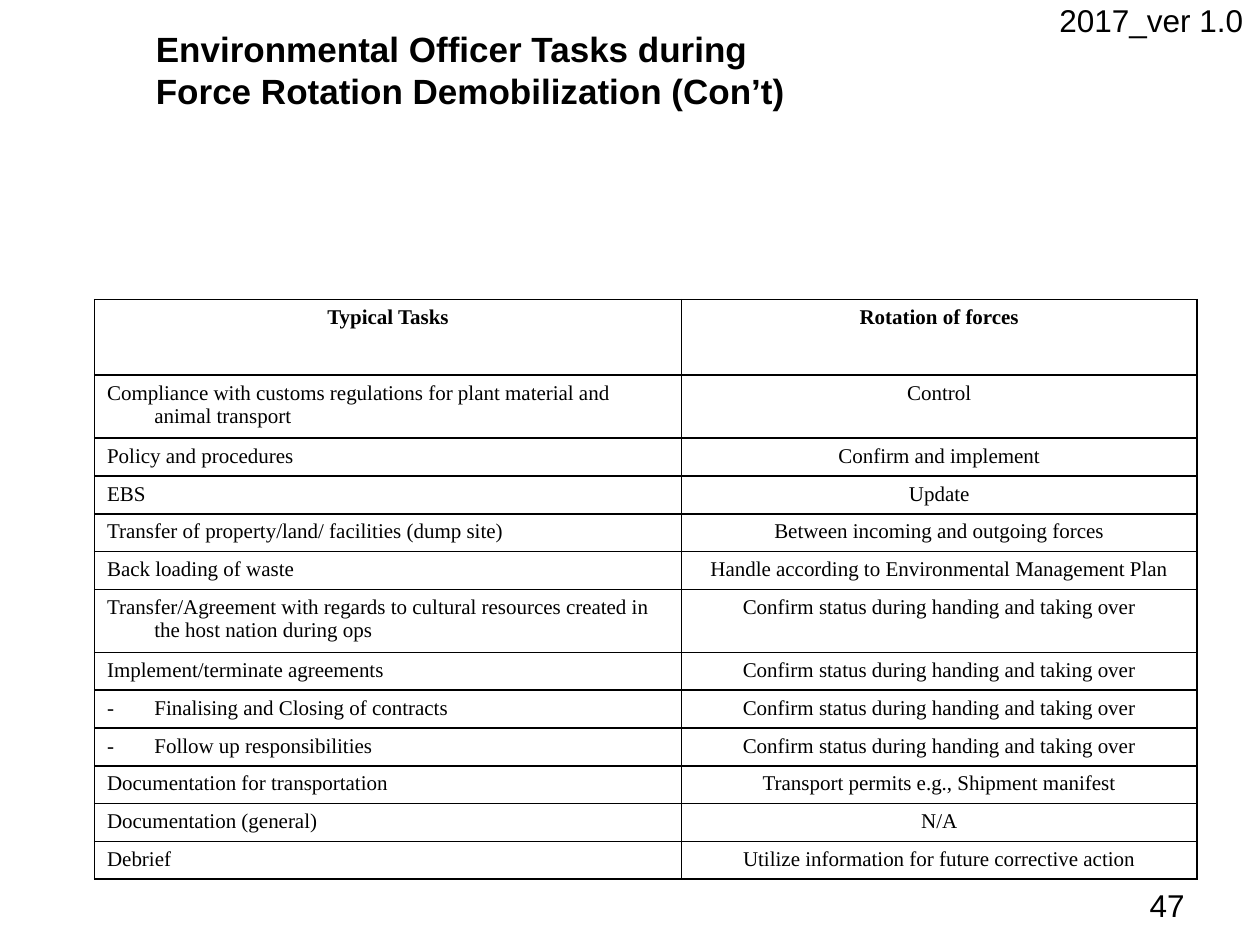
from lxml.etree import SubElement
from pptx import Presentation
from pptx.dml.color import RGBColor
from pptx.enum.text import PP_ALIGN as Align
from pptx.oxml.ns import qn
from pptx.util import Pt

BLACK, WHITE = "000000", "FFFFFF"
HANGING = 27
COLUMN_WIDTHS = (335.5, 294.5)
HEADER_HEIGHT, ROW_HEIGHT, TALL_ROW_HEIGHT = 43.2, 21.6, 36
STATUS = "Confirm status during handing and taking over"
HEADINGS = ("Typical Tasks", "Rotation of forces")
TASKS = [
    ("Compliance with customs regulations for plant material and animal transport", "Control"),
    ("Policy and procedures", "Confirm and implement"),
    ("EBS", "Update"),
    ("Transfer of property/land/ facilities (dump site)", "Between incoming and outgoing forces"),
    ("Back loading of waste", "Handle according to Environmental Management Plan"),
    ("Transfer/Agreement with regards to cultural resources created in the host nation during ops",
     STATUS),
    ("Implement/terminate agreements", STATUS),
    ("-\tFinalising and Closing of contracts", STATUS),
    ("-\tFollow up responsibilities", STATUS),
    ("Documentation for transportation", "Transport permits e.g., Shipment manifest"),
    ("Documentation (general)", "N/A"),
    ("Debrief", "Utilize information for future corrective action"),
]
TWO_LINE_TASKS = (0, 5)


def color(value):
    return RGBColor.from_string(value)


def style(paragraph, name, size, bold=False, align=Align.LEFT):
    paragraph.alignment = align
    font = paragraph.font
    font.name, font.size, font.bold = name, Pt(size), bold
    font.color.rgb = color(BLACK)


def add_text(slide, box, lines, size, bold=False, align=Align.LEFT, wrap=True, spacing=None):
    frame = slide.shapes.add_textbox(*map(Pt, box)).text_frame
    frame.word_wrap = wrap
    frame.text = "\n".join(lines)
    for paragraph in frame.paragraphs:
        style(paragraph, "Arial", size, bold, align)
        if spacing:
            paragraph.line_spacing = Pt(spacing)


def add_borders(cell):
    properties = cell._tc.get_or_add_tcPr()
    for side in ("lnL", "lnR", "lnT", "lnB"):
        line = SubElement(properties, qn(f"a:{side}"), w=str(Pt(1)))
        fill = SubElement(line, qn("a:solidFill"))
        SubElement(fill, qn("a:srgbClr"), val=BLACK)


def fill_cell(cell, text, bold, align):
    add_borders(cell)
    cell.fill.solid()
    cell.fill.fore_color.rgb = color(WHITE)
    cell.text = text
    paragraph = cell.text_frame.paragraphs[0]
    properties = paragraph._p.get_or_add_pPr()
    properties.set("marL", str(Pt(HANGING)))
    properties.set("indent", str(-Pt(HANGING)))
    style(paragraph, "Times New Roman", 12, bold, align)


def add_task_table(slide, box):
    rows = [HEADINGS, *TASKS]
    table = slide.shapes.add_table(len(rows), len(HEADINGS), *map(Pt, box)).table
    table.horz_banding = False
    for column, width in zip(table.columns, COLUMN_WIDTHS):
        column.width = Pt(width)
    heights = [HEADER_HEIGHT] + [TALL_ROW_HEIGHT if index in TWO_LINE_TASKS else ROW_HEIGHT
                                 for index in range(len(TASKS))]
    for row_index, (row, height) in enumerate(zip(rows, heights)):
        table.rows[row_index].height = Pt(height)
        for column_index, text in enumerate(row):
            heading = row_index == 0
            align = Align.CENTER if heading or column_index else Align.LEFT
            fill_cell(table.cell(row_index, column_index), text, heading, align)


def main():
    presentation = Presentation()
    presentation.slide_width, presentation.slide_height = Pt(720), Pt(540)
    slide = presentation.slides.add_slide(presentation.slide_layouts[6])

    # Task table
    add_task_table(slide, (54, 171.2, 630, 331.2))
    # Title
    add_text(slide, (82, 12.2, 695.5, 55.4),
             ["Environmental Officer Tasks during", "Force Rotation Demobilization (Con’t)"],
             20, bold=True, spacing=24)
    # Page number and version
    add_text(slide, (516.2, 502.5, 167.8, 37.5), ["47"], 18, align=Align.RIGHT)
    add_text(slide, (598.3, -2.9, 120.2, 28.8), ["2017_ver 1.0"], 18, wrap=False)

    presentation.save("out.pptx")


if __name__ == "__main__":
    main()
